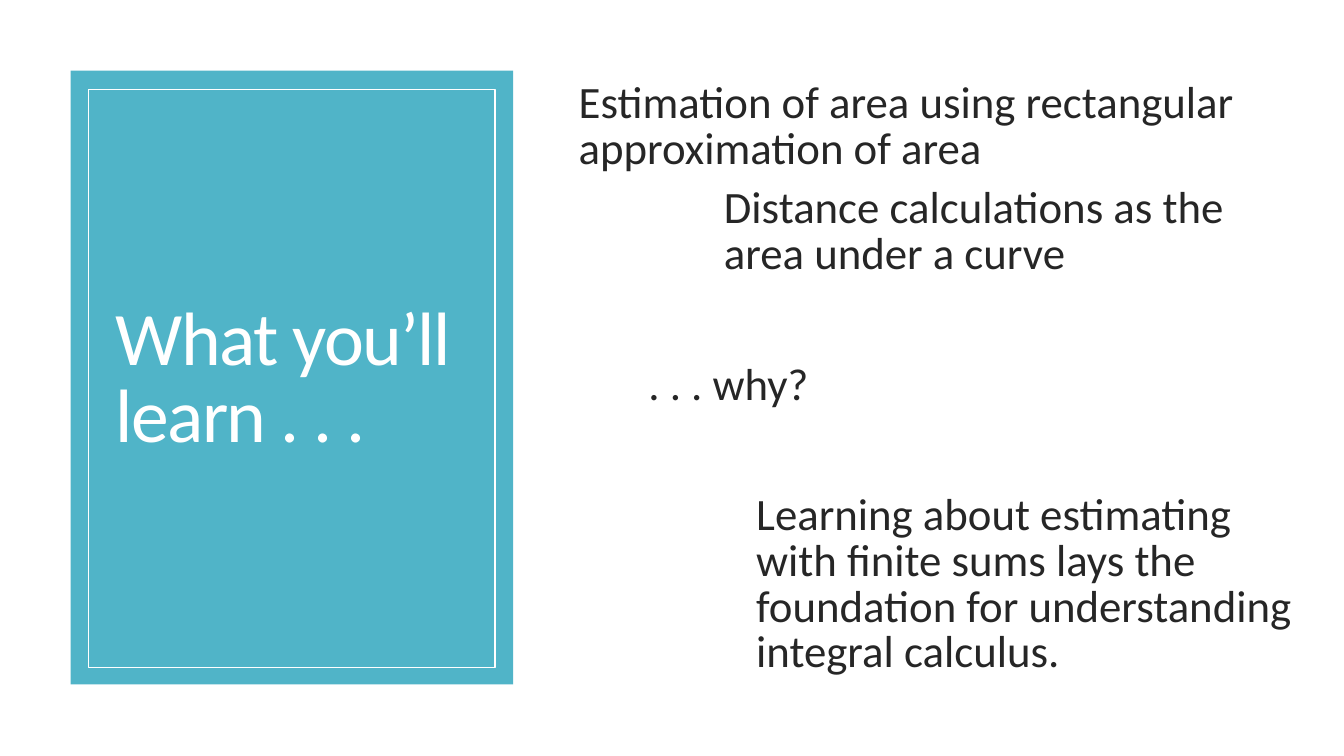
from pptx import Presentation
from pptx.dml.color import RGBColor
from pptx.enum.shapes import MSO_SHAPE
from pptx.enum.text import MSO_ANCHOR, MSO_AUTO_SIZE, PP_ALIGN
from pptx.util import Inches, Pt

RECTANGLE = MSO_SHAPE.RECTANGLE
MIDDLE = MSO_ANCHOR.MIDDLE
NO_AUTOFIT = MSO_AUTO_SIZE.NONE
LEFT = PP_ALIGN.LEFT

WIDTH, HEIGHT = Inches(13.33), Inches(7.5)
COLORS = {"panel": "50B4C8", "light": "FFFFFF", "text": "262626"}
COMPARISON_LAYOUT = 4

PANEL_AREA = (5.25, 9.33, 32.93, 81.2)
FRAME_AREA = (6.6, 11.87, 30.23, 76.4)
TITLE_AREA = (7.88, 15.07, 27.61, 70.67)

TOPICS = {
    1: ((39.46, 6.13, 53.34, 35.47), [
        ("Estimation of area using rectangular approximation of area", 0.38),
        ("Distance calculations as the area under a curve", 1.82),
    ]),
    2: ((44.64, 33.47, 50.41, 35.47), [(". . . why?", 0.38)]),
    3: ((48.46, 63.6, 50.41, 27.73), [
        ("Learning about estimating with finite sums lays the foundation "
         "for understanding integral calculus.", 0.94),
    ]),
}


def color(name):
    return RGBColor.from_string(COLORS[name])


def to_lengths(area):
    left, top, width, height = area
    return (int(WIDTH * left / 100), int(HEIGHT * top / 100),
            int(WIDTH * width / 100), int(HEIGHT * height / 100))


def add_rectangle(slide, area, fill=None, line=None):
    rectangle = slide.shapes.add_shape(RECTANGLE, *to_lengths(area))
    rectangle.shadow.inherit = False
    if fill:
        rectangle.fill.solid()
        rectangle.fill.fore_color.rgb = color(fill)
    else:
        rectangle.fill.background()
    if line:
        rectangle.line.color.rgb = color(line)
        rectangle.line.width = Pt(1)
    else:
        rectangle.line.fill.background()
    slide.shapes.title.element.addprevious(rectangle.element)


def place(placeholder, area):
    (placeholder.left, placeholder.top,
     placeholder.width, placeholder.height) = to_lengths(area)
    frame = placeholder.text_frame
    frame.word_wrap = True
    frame.auto_size = NO_AUTOFIT
    frame.vertical_anchor = MIDDLE
    return frame


def style(paragraph, size, color_name, before, after):
    paragraph.alignment = LEFT
    paragraph.line_spacing = 0.85
    paragraph.space_before = Pt(before)
    paragraph.space_after = Pt(after)
    paragraph.font.name = "Calibri"
    paragraph.font.size = Pt(size)
    paragraph.font.bold = False
    paragraph.font.color.rgb = color(color_name)


def write_title(title, text):
    heading = place(title, TITLE_AREA).paragraphs[0]
    heading.text = text
    style(heading, 54, "light", 0, 6)
    heading.runs[0].font.element.set("spc", "-120") if hasattr(
        heading.runs[0].font, "element") else heading.runs[0]._r.get_or_add_rPr().set("spc", "-120")


def write_topics(body, area, topics):
    frame = place(body, area)
    frame.text = "\n".join(text for text, _ in topics)
    for paragraph, (_, indent) in zip(frame.paragraphs, topics):
        style(paragraph, 32, "text", 10, 0)
        properties = paragraph._p.get_or_add_pPr()
        properties.set("marL", str(Inches(indent)))
        properties.set("indent", "0")
        bullet = properties.makeelement(
            "{http://schemas.openxmlformats.org/drawingml/2006/main}buNone", {})
        properties.find("{*}defRPr").addprevious(bullet)


def main():
    presentation = Presentation()
    presentation.slide_width, presentation.slide_height = WIDTH, HEIGHT
    slide = presentation.slides.add_slide(
        presentation.slide_layouts[COMPARISON_LAYOUT])

    add_rectangle(slide, PANEL_AREA, fill="panel")
    add_rectangle(slide, FRAME_AREA, line="light")
    write_title(slide.shapes.title, "What you’ll learn . . .")

    for placeholder in list(slide.placeholders):
        position = placeholder.placeholder_format.idx
        if position in TOPICS:
            write_topics(placeholder, *TOPICS[position])
        elif position:
            placeholder.element.getparent().remove(placeholder.element)

    presentation.save("out.pptx")


if __name__ == "__main__":
    main()
